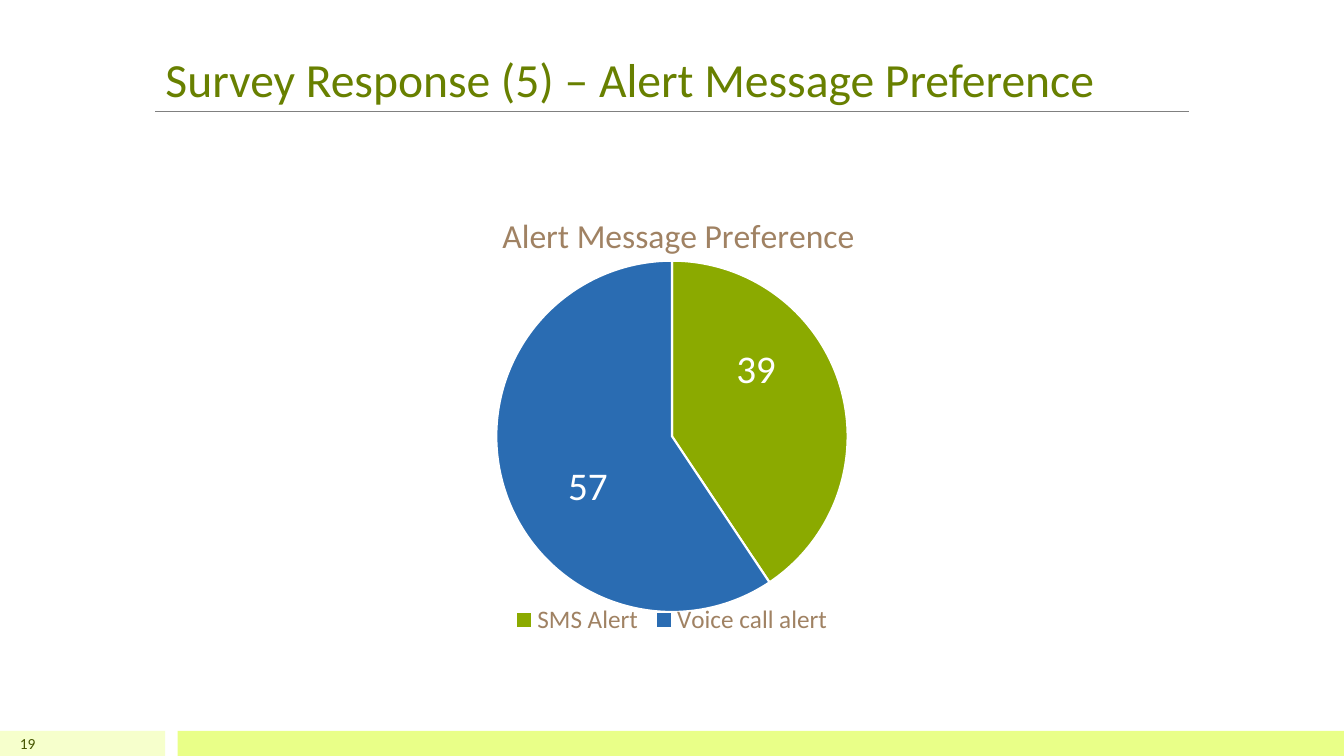
from dataclasses import dataclass

from lxml.etree import SubElement
from pptx import Presentation
from pptx.chart.data import CategoryChartData
from pptx.dml.color import RGBColor
from pptx.enum.chart import XL_CHART_TYPE as ChartType
from pptx.enum.chart import XL_LABEL_POSITION as LabelPosition
from pptx.enum.chart import XL_LEGEND_POSITION as LegendPosition
from pptx.enum.shapes import MSO_CONNECTOR as Connector
from pptx.enum.shapes import MSO_SHAPE as Shape
from pptx.enum.text import MSO_ANCHOR as Anchor
from pptx.enum.text import PP_ALIGN as Align
from pptx.oxml.ns import qn
from pptx.util import Pt


@dataclass(frozen=True)
class Theme:
    font: str = "Calibri"
    title: str = "688000"
    rule: str = "808080"
    pale_bar: str = "F6FFCC"
    bright_bar: str = "E9FF88"
    number: str = "455500"
    caption: str = "A08263"
    white: str = "FFFFFF"
    slices: tuple = ("8BAA00", "2A6CB2")
    title_size: int = 34
    number_size: int = 11
    caption_size: int = 24
    legend_size: int = 18
    label_size: int = 28


THEME = Theme()
WIDTH, HEIGHT = 960, 540


def rgb(value):
    return RGBColor.from_string(value)


def style(font, size, color):
    font.name, font.size, font.bold = THEME.font, Pt(size), False
    font.color.rgb = rgb(color)


def place(shape, box):
    shape.left, shape.top, shape.width, shape.height = map(Pt, box)


def add_title(page, box, text):
    """Fill the title placeholder and underline it along the foot of its box."""
    left, top, width, height = box
    title = page.shapes.title
    place(title, box)
    frame = title.text_frame
    frame.text = text
    frame.word_wrap = True
    frame.vertical_anchor = Anchor.BOTTOM
    para = frame.paragraphs[0]
    para.alignment = Align.LEFT
    style(para.runs[0].font, THEME.title_size, THEME.title)

    foot = Pt(top + height - 0.8)
    rule = page.shapes.add_connector(
        Connector.STRAIGHT, Pt(left), foot, Pt(left + width), foot)
    rule.line.color.rgb = rgb(THEME.rule)
    rule.line.width = Pt(0.5)
    SubElement(rule._element.spPr, qn("a:effectLst"))


def add_footer(page, box, number):
    """Draw the two footer bars and the page number over the first one."""
    left, top, width, height = box
    split, gap = 118, 9
    bars = (
        (left, split, THEME.pale_bar),
        (left + split + gap, width - split - gap, THEME.bright_bar),
    )
    for bar_left, bar_width, color in bars:
        bar = page.shapes.add_shape(
            Shape.RECTANGLE, *map(Pt, (bar_left, top, bar_width, height)))
        bar.shadow.inherit = False
        bar.fill.solid()
        bar.fill.fore_color.rgb = rgb(color)
        bar.line.fill.background()

    label = page.shapes.add_textbox(*map(Pt, (left, top, 32.4, height)))
    frame = label.text_frame
    frame.word_wrap = True
    frame.vertical_anchor = Anchor.MIDDLE
    frame.text = number
    para = frame.paragraphs[0]
    para.alignment = Align.RIGHT
    style(para.runs[0].font, THEME.number_size, THEME.number)


def set_layout(parent, index, **values):
    """Give a chart part a manual layout, in fractions of the chart."""
    for old in parent.findall(qn("c:layout")):
        parent.remove(old)
    layout = SubElement(parent, qn("c:layout"))
    parent.insert(index, layout)
    manual = SubElement(layout, qn("c:manualLayout"))
    for name, value in values.items():
        SubElement(manual, qn(f"c:{name}")).set("val", str(value))


def add_preference_pie(page, box, caption, answers):
    data = CategoryChartData(number_format="###0")
    data.categories = list(answers)
    data.add_series("Series 1", list(answers.values()))
    chart = page.shapes.add_chart(ChartType.PIE, *map(Pt, box), data).chart
    style(chart.font, THEME.legend_size, THEME.caption)

    chart.has_title = True
    frame = chart.chart_title.text_frame
    frame.text = caption
    style(frame.paragraphs[0].runs[0].font, THEME.caption_size, THEME.caption)
    chart.has_legend = True
    chart.legend.position = LegendPosition.BOTTOM
    chart.legend.include_in_layout = False
    style(chart.legend.font, THEME.legend_size, THEME.caption)

    plot = chart.plots[0]
    plot.vary_by_categories = True
    plot.has_data_labels = True
    labels = plot.data_labels
    labels.show_value = True
    labels.number_format = "###0"
    labels.number_format_is_linked = False
    style(labels.font, THEME.label_size, THEME.white)
    for index, color in enumerate(THEME.slices):
        point = plot.series[0].points[index]
        point.format.fill.solid()
        point.format.fill.fore_color.rgb = rgb(color)
        point.format.line.color.rgb = rgb(THEME.white)
        point.format.line.width = Pt(1.5)
        style(point.data_label.font, THEME.label_size, THEME.white)
        point.data_label.position = LabelPosition.CENTER

    space = chart._chartSpace
    edge = {"xMode": "edge", "yMode": "edge"}
    set_layout(space.xpath(".//c:title")[0], 1, **edge, x=0.33, y=0.08)
    set_layout(space.xpath(".//c:plotArea")[0], 0, layoutTarget="inner",
               **edge, x=0.33, y=0.18, w=0.34, h=0.7)
    set_layout(space.xpath(".//c:legend")[0], 1,
               **edge, x=0.34, y=0.86, w=0.32, h=0.06)
    for label, shift in zip(space.xpath(".//c:dLbl"), (-0.08, 0.05)):
        set_layout(label, 1, x=0, y=shift)


def main():
    deck = Presentation()
    deck.slide_width, deck.slide_height = Pt(WIDTH), Pt(HEIGHT)
    page = deck.slides.add_slide(deck.slide_layouts[5])
    left, width = 111, 738
    add_footer(page, (0, 522, WIDTH, 18), "19")
    add_title(page, (left, 9.4, width, 70.6),
              "Survey Response (5) – Alert Message Preference")
    add_preference_pie(page, (left, 119, width, 363.6),
                       "Alert Message Preference",
                       {"SMS Alert": 39, "Voice call alert": 57})
    deck.save("out.pptx")


if __name__ == "__main__":
    main()
